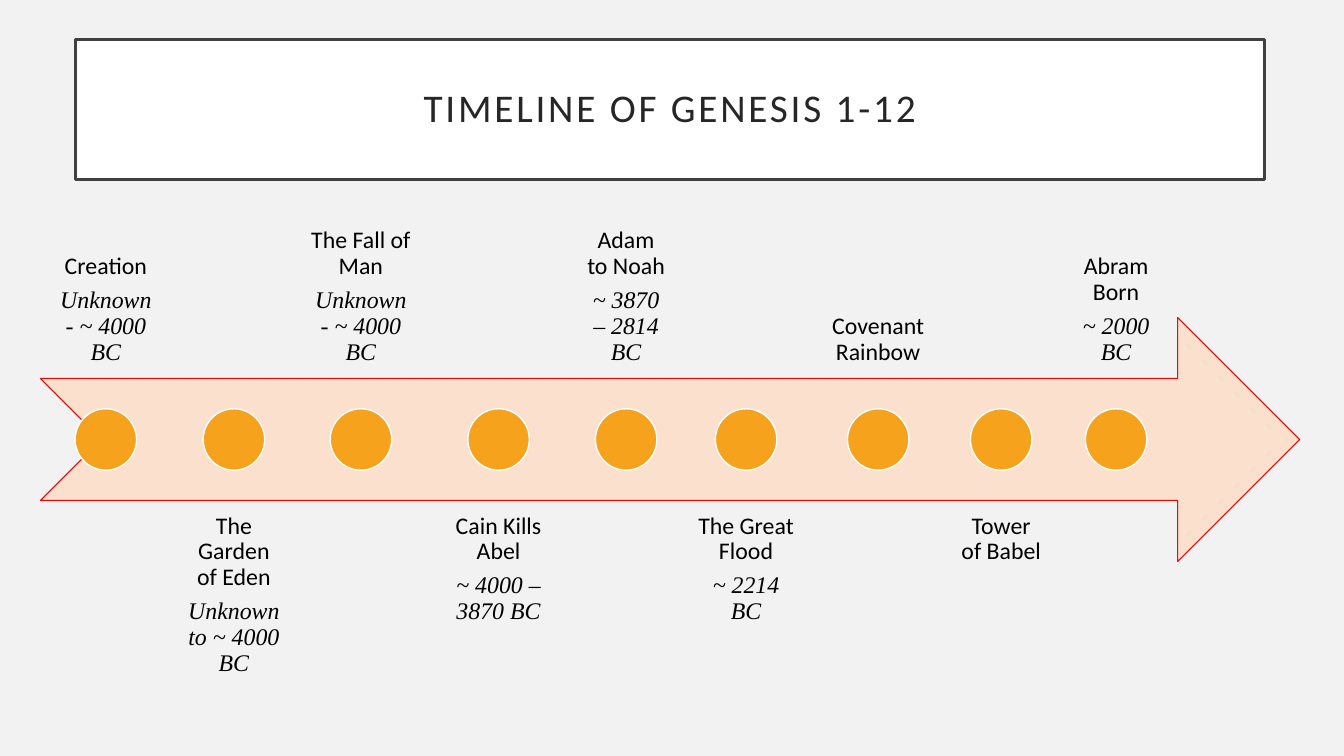
from pptx import Presentation
from pptx.dml.color import RGBColor
from pptx.enum.shapes import MSO_SHAPE
from pptx.enum.text import MSO_ANCHOR, PP_ALIGN
from pptx.util import Inches, Pt

BACKGROUND = RGBColor(0xF2, 0xF2, 0xF2)
WHITE = RGBColor(0xFF, 0xFF, 0xFF)
BLACK = RGBColor(0x00, 0x00, 0x00)
FRAME = RGBColor(0x40, 0x40, 0x40)
TITLE_TEXT = RGBColor(0x26, 0x26, 0x26)
ARROW_FILL = RGBColor(0xFB, 0xE0, 0xCD)
ARROW_LINE = RGBColor(0xFF, 0x00, 0x00)
DOT = RGBColor(0xF6, 0xA2, 0x1D)

DOT_SIZE = 0.61
EVENT_GAP = 0.03
EVENT_HEIGHT = 2.42
EVENTS = [
    (1.28, "Creation", "Unknown - ~ 4000 BC"),
    (1.20, "The Garden of Eden", "Unknown to ~ 4000 BC"),
    (1.26, "The Fall of Man", "Unknown - ~ 4000 BC"),
    (1.41, "Cain Kills Abel", "~ 4000 – 3870 BC"),
    (1.06, "Adam to Noah", "~ 3870 – 2814 BC"),
    (1.26, "The Great Flood", "~ 2214 BC"),
    (1.30, "Covenant Rainbow", None),
    (1.08, "Tower of Babel", None),
    (1.14, "Abram Born", "~ 2000 BC"),
]


def add_box(slide, preset, box, fill, line, line_width):
    """Draw a filled and outlined preset shape in the box."""
    sp = slide.shapes.add_shape(preset, *map(Inches, box))
    sp.shadow.inherit = False
    sp.fill.solid()
    sp.fill.fore_color.rgb = fill
    sp.line.color.rgb = line
    sp.line.width = Pt(line_width)
    return sp


def prepare_text(sp, inset, anchor):
    """Set wrapping, insets and anchor, and return the text frame."""
    tf = sp.text_frame
    tf.word_wrap = True
    tf.margin_left = tf.margin_right = Inches(inset)
    tf.margin_top = tf.margin_bottom = Inches(inset)
    tf.vertical_anchor = anchor
    return tf


def write_line(p, text, size, font, color, italic=False):
    """Write one centred paragraph in a single format."""
    p.text = text
    p.alignment = PP_ALIGN.CENTER
    p.line_spacing = 0.9
    r = p.runs[0]
    r.font.size = Pt(size)
    r.font.name = font
    r.font.italic = italic
    r.font.color.rgb = color
    return r


def add_title(slide, box, text):
    """Draw the framed title with spaced letters."""
    sp = add_box(slide, MSO_SHAPE.RECTANGLE, box, WHITE, FRAME, 2.5)
    tf = prepare_text(sp, 0.2, MSO_ANCHOR.MIDDLE)
    r = write_line(tf.paragraphs[0], text, 28, "Calibri", TITLE_TEXT)
    r.font._element.set("spc", "200")


def add_event(slide, box, name, date, anchor):
    """Write an event name and, if known, its date."""
    sp = slide.shapes.add_textbox(*map(Inches, box))
    tf = prepare_text(sp, 0.13, anchor)
    p = tf.paragraphs[0]
    write_line(p, name, 17, "Calibri", BLACK)
    if date:
        p.space_after = Pt(6)
        write_line(tf.add_paragraph(), date, 17, "Times New Roman", BLACK, True)


def add_timeline(slide, box, events):
    """Draw the arrow with events alternating above and below it."""
    left, top, width, height = box
    add_box(slide, MSO_SHAPE.NOTCHED_RIGHT_ARROW, box, ARROW_FILL, ARROW_LINE, 0.75)
    middle = top + height / 2
    band = height / 4
    x = left + 0.01
    for i, (event_width, name, date) in enumerate(events):
        if i % 2 == 0:
            y, anchor = middle - band - EVENT_HEIGHT, MSO_ANCHOR.BOTTOM
        else:
            y, anchor = middle + band, MSO_ANCHOR.TOP
        add_event(slide, (x, y, event_width, EVENT_HEIGHT), name, date, anchor)
        dot = (x + (event_width - DOT_SIZE) / 2, middle - DOT_SIZE / 2, DOT_SIZE, DOT_SIZE)
        add_box(slide, MSO_SHAPE.OVAL, dot, DOT, WHITE, 1)
        x += event_width + EVENT_GAP


def main():
    """Build the slide and save it."""
    prs = Presentation()
    prs.slide_width, prs.slide_height = Inches(13.33), Inches(7.5)
    slide = prs.slides.add_slide(prs.slide_layouts[6])
    slide.background.fill.solid()
    slide.background.fill.fore_color.rgb = BACKGROUND
    add_title(slide, (0.75, 0.39, 11.79, 1.39), "TIMELINE OF GENESIS 1-12")
    add_timeline(slide, (0.4, 3.15, 12.49, 2.42), EVENTS)
    prs.save("out.pptx")


if __name__ == "__main__":
    main()
